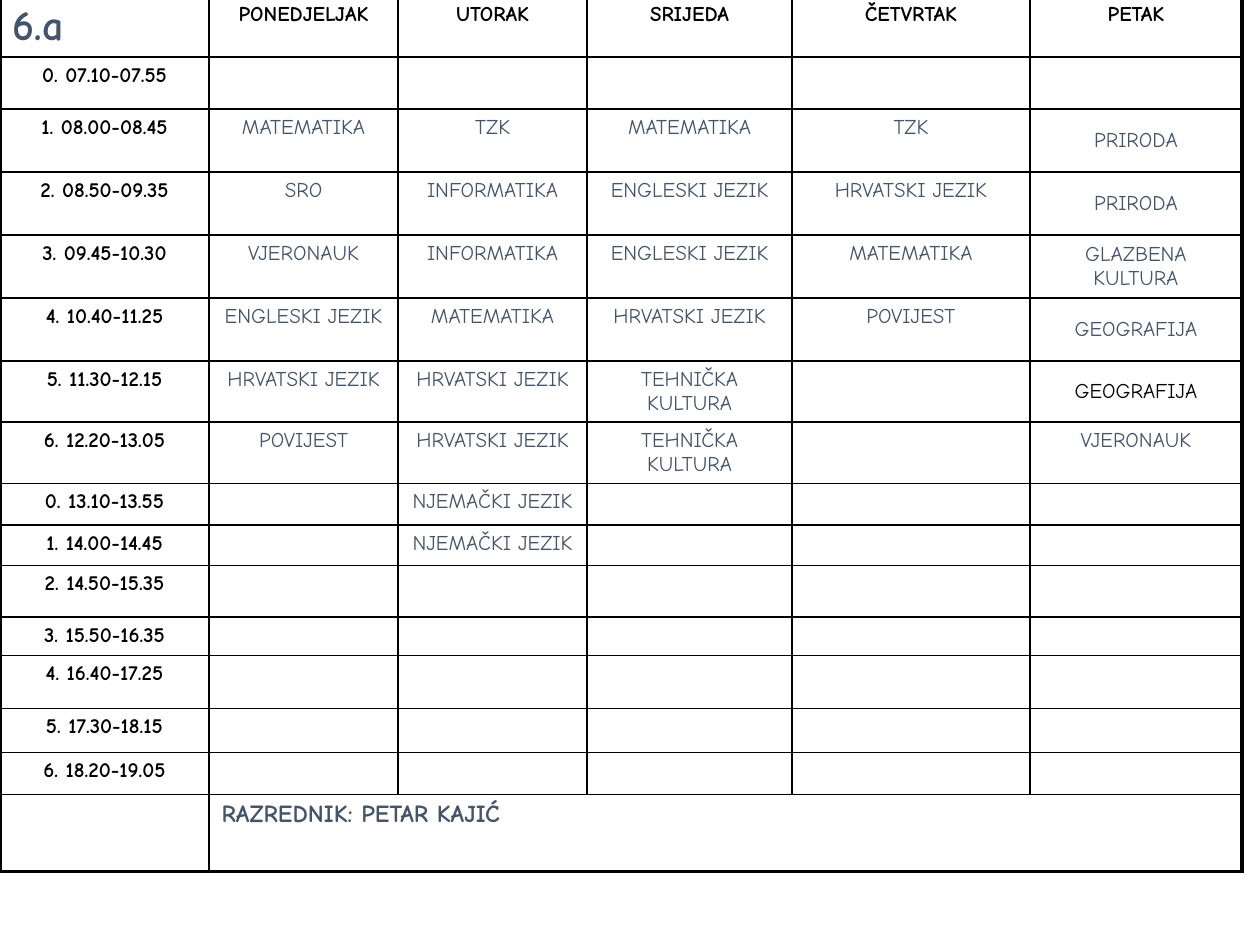
from lxml.etree import SubElement, fromstring
from pptx import Presentation
from pptx.dml.color import RGBColor
from pptx.enum.text import MSO_ANCHOR as ANCHOR, PP_ALIGN as ALIGN
from pptx.oxml.ns import nsdecls, qn
from pptx.util import Pt

COLORS = {"ink": "000000", "slate": "44546A"}
FONT = "Comic Neue"
THIN, THICK = 1, 2.25
COL_WIDTHS = [119.5, 108, 108, 117.2, 135.8, 121.4]
ROW_HEIGHTS = [34.8, 29.7, 36, 36, 36, 36, 34.9, 34.9,
               24, 22.9, 29.7, 21.1, 30.3, 25.1, 24, 44]
TIMETABLE = [
    ["6.a", "PONEDJELJAK", "UTORAK", "SRIJEDA", "ČETVRTAK", "PETAK"],
    ["0. 07.10-07.55"],
    ["1. 08.00-08.45", "MATEMATIKA", "TZK", "MATEMATIKA", "TZK", "PRIRODA"],
    ["2. 08.50-09.35", "SRO", "INFORMATIKA", "ENGLESKI JEZIK", "HRVATSKI JEZIK", "PRIRODA"],
    ["3. 09.45-10.30", "VJERONAUK", "INFORMATIKA", "ENGLESKI JEZIK", "MATEMATIKA",
     "GLAZBENA KULTURA"],
    ["4. 10.40-11.25", "ENGLESKI JEZIK", "MATEMATIKA", "HRVATSKI JEZIK", "POVIJEST",
     "GEOGRAFIJA"],
    ["5. 11.30-12.15", "HRVATSKI JEZIK", "HRVATSKI JEZIK", "TEHNIČKA KULTURA", "",
     "GEOGRAFIJA"],
    ["6. 12.20-13.05", "POVIJEST", "HRVATSKI JEZIK", "TEHNIČKA KULTURA", "", "VJERONAUK"],
    ["0. 13.10-13.55", "", "NJEMAČKI JEZIK"],
    ["1. 14.00-14.45", "", "NJEMAČKI JEZIK"],
    ["2. 14.50-15.35"],
    ["3. 15.50-16.35"],
    ["4. 16.40-17.25"],
    ["5. 17.30-18.15"],
    ["6. 18.20-19.05"],
    ["", "RAZREDNIK: PETAR KAJIĆ"],
]
LAST_ROW, LAST_COL = len(ROW_HEIGHTS) - 1, len(COL_WIDTHS) - 1


def write_text(cell, text, size=12, color="slate", bold=False, align=ALIGN.CENTER,
               anchor=ANCHOR.TOP):
    """Write formatted text in a cell, keeping the size when it is empty."""
    cell.vertical_anchor = anchor
    p = cell.text_frame.paragraphs[0]
    p.alignment = align
    if not text:
        SubElement(p._p, qn("a:endParaRPr"), sz=str(size * 100))
        return
    r = p.add_run()
    r.text = text
    r.font.name = FONT
    r.font.size = Pt(size)
    r.font.bold = bold
    r.font.color.rgb = RGBColor.from_string(COLORS[color])


def text_format(row, col):
    """Return the text format that belongs to a place in the timetable."""
    if (row, col) == (0, 0):
        return {"size": 24, "bold": True, "align": ALIGN.LEFT}
    if row == LAST_ROW:
        return {"size": 14, "bold": True, "align": ALIGN.LEFT}
    if row == 0 or col == 0:
        return {"color": "ink", "bold": True}
    if col == LAST_COL and 2 <= row <= 6:
        return {"anchor": ANCHOR.MIDDLE, "color": "ink" if row == 6 else "slate"}
    return {}


def set_borders(cell, row, col):
    """Draw thin inner borders and thick outer borders on a cell."""
    outer = {"L": col == 0, "R": col + cell.span_width > LAST_COL,
             "T": row == 0, "B": row == LAST_ROW}
    tc_pr = cell._tc.get_or_add_tcPr()
    for i, (side, is_outer) in enumerate(outer.items()):
        width = Pt(THICK if is_outer else THIN)
        tc_pr.insert(i, fromstring(
            f'<a:ln{side} {nsdecls("a")} w="{width}"><a:solidFill>'
            f'<a:srgbClr val="{COLORS["ink"]}"/></a:solidFill></a:ln{side}>'))


def add_timetable(s):
    """Add the weekly timetable with its footer cell."""
    frame = s.shapes.add_table(len(ROW_HEIGHTS), len(COL_WIDTHS), Pt(0), Pt(-2.16),
                               Pt(sum(COL_WIDTHS)), Pt(sum(ROW_HEIGHTS)))
    table = frame.table
    table.first_row = table.horz_banding = False
    for column, width in zip(table.columns, COL_WIDTHS):
        column.width = Pt(width)
    for row, height in zip(table.rows, ROW_HEIGHTS):
        row.height = Pt(height)
    table.cell(LAST_ROW, 1).merge(table.cell(LAST_ROW, LAST_COL))
    for row, texts in enumerate(TIMETABLE):
        for col in range(LAST_COL + 1):
            cell = table.cell(row, col)
            if cell.is_spanned:
                continue
            cell.fill.background()
            set_borders(cell, row, col)
            write_text(cell, texts[col] if col < len(texts) else "",
                       **text_format(row, col))


def main():
    """Build the timetable slide and save it."""
    prs = Presentation()
    prs.slide_width, prs.slide_height = Pt(720), Pt(540)
    s = prs.slides.add_slide(prs.slide_layouts[6])
    add_timetable(s)
    prs.save("out.pptx")


if __name__ == "__main__":
    main()
